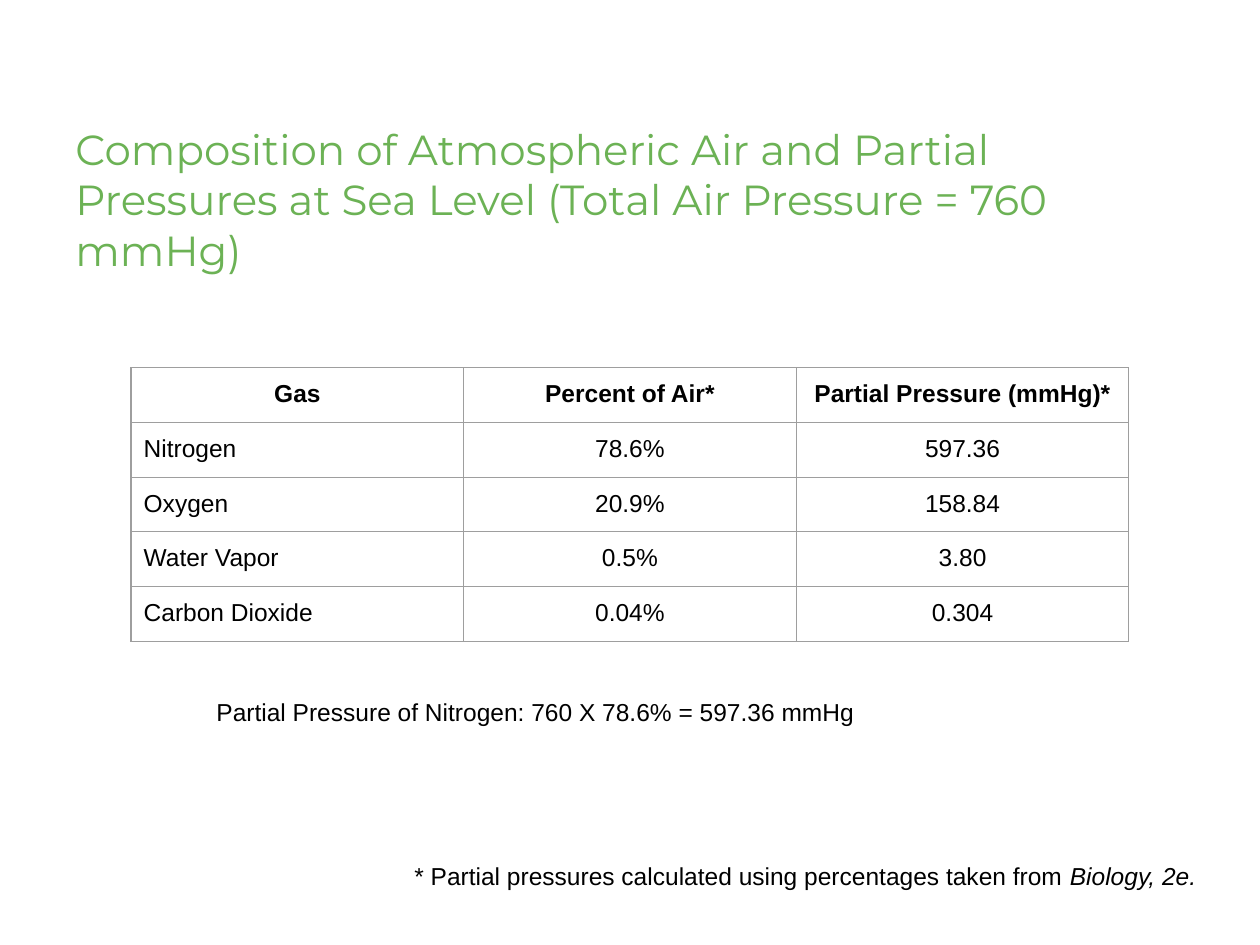
"""Build a slide on the composition of air and its partial pressures."""
import pptx
import pptx.dml.color
import pptx.enum.text
import pptx.oxml
import pptx.oxml.ns
import pptx.util
from pptx.util import Inches

COLORS = {"title": "6CB255", "text": "000000", "border": "9E9E9E"}
ROWS = [
    ("Gas", "Percent of Air*", "Partial Pressure (mmHg)*"),
    ("Nitrogen", "78.6%", "597.36"),
    ("Oxygen", "20.9%", "158.84"),
    ("Water Vapor", "0.5%", "3.80"),
    ("Carbon Dioxide", "0.04%", "0.304"),
]
COLUMN_WIDTH = 2.64
ROW_HEIGHT = 0.42


def add_span(para, text, size=14, font="Arial", color="text", bold=False, italic=False):
    """Append one formatted run to a paragraph."""
    span = para.add_run()
    span.text = text
    span.font.size = pptx.util.Pt(size)
    span.font.name = font
    span.font.bold = bold
    span.font.italic = italic
    span.font.color.rgb = pptx.dml.color.RGBColor.from_string(COLORS[color])


def add_box(page, left, top, width, height, inset=0.1):
    """Add a wrapping text box and return its text frame."""
    box = page.shapes.add_textbox(Inches(left), Inches(top), Inches(width), Inches(height))
    frame = box.text_frame
    frame.word_wrap = True
    frame.margin_left = frame.margin_right = Inches(0.1)
    frame.margin_top = frame.margin_bottom = Inches(inset)
    return frame


def add_title(page, text):
    """Add the bottom-anchored slide title."""
    frame = add_box(page, 0.5, 0.26, 8.82, 1.97, inset=0.05)
    frame.vertical_anchor = pptx.enum.text.MSO_ANCHOR.BOTTOM
    add_span(frame.paragraphs[0], text, 24, "Montserrat", "title")


def set_borders(cell):
    """Draw a thin line on all four sides of a cell."""
    properties = cell._tc.get_or_add_tcPr()
    for position, side in enumerate(("lnL", "lnR", "lnT", "lnB")):
        line = pptx.oxml.parse_xml(
            f'<a:{side} {pptx.oxml.ns.nsdecls("a")} w="{pptx.util.Pt(0.75)}"><a:solidFill>'
            f'<a:srgbClr val="{COLORS["border"]}"/></a:solidFill></a:{side}>'
        )
        properties.insert(position, line)


def fill_cell(cell, text, header, centered):
    """Write and format one table cell."""
    cell.margin_left = cell.margin_right = Inches(0.1)
    cell.margin_top = cell.margin_bottom = Inches(0.1)
    cell.fill.background()
    set_borders(cell)
    para = cell.text_frame.paragraphs[0]
    if centered:
        para.alignment = pptx.enum.text.PP_ALIGN.CENTER
    add_span(para, text, bold=header)


def add_gas_table(page):
    """Add the table of gases, percentages and pressures."""
    column_count = len(ROWS[0])
    table = page.shapes.add_table(
        len(ROWS), column_count, Inches(1.04), Inches(2.92),
        Inches(COLUMN_WIDTH * column_count), Inches(ROW_HEIGHT * len(ROWS)),
    ).table
    table.first_row = table.horz_banding = False
    for column in table.columns:
        column.width = Inches(COLUMN_WIDTH)
    for row_index, values in enumerate(ROWS):
        table.rows[row_index].height = Inches(ROW_HEIGHT)
        header = row_index == 0
        for column_index, text in enumerate(values):
            cell = table.cell(row_index, column_index)
            fill_cell(cell, text, header, header or column_index > 0)


def main():
    """Build and save the deck."""
    deck = pptx.Presentation()
    deck.slide_width, deck.slide_height = Inches(10), Inches(7.5)
    page = deck.slides.add_slide(deck.slide_layouts[6])
    add_title(page, "Composition of Atmospheric Air and Partial Pressures "
                    "at Sea Level (Total Air Pressure = 760 mmHg)")
    add_gas_table(page)
    example = add_box(page, 1.62, 5.43, 6.76, 0.48).paragraphs[0]
    add_span(example, "Partial Pressure of Nitrogen: 760 X 78.6% = 597.36 mmHg")
    footnote = add_box(page, 3.19, 6.73, 6.76, 0.48).paragraphs[0]
    add_span(footnote, "* Partial pressures calculated using percentages taken from ")
    add_span(footnote, "Biology, 2e.", italic=True)
    deck.save("out.pptx")


if __name__ == "__main__":
    main()
